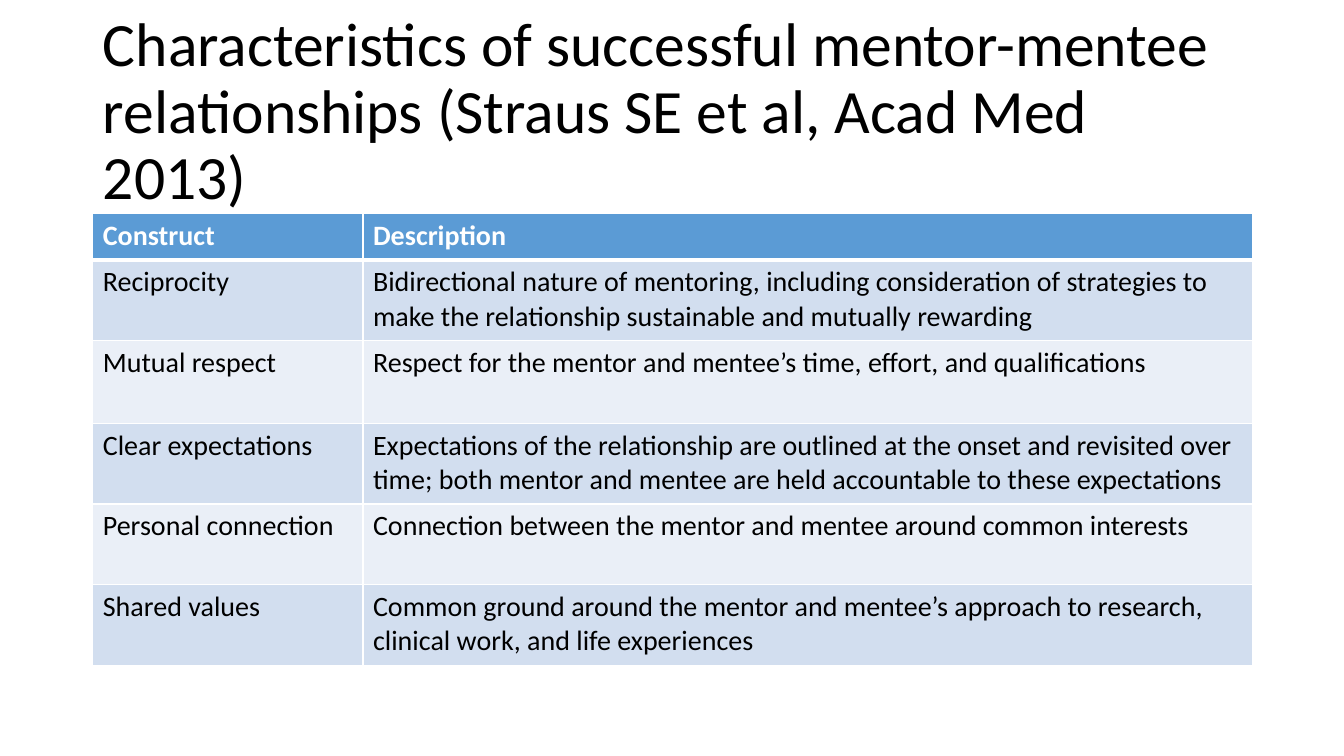
from lxml.etree import SubElement
from pptx import Presentation
from pptx.dml.color import RGBColor
from pptx.enum.text import MSO_ANCHOR, MSO_AUTO_SIZE, PP_ALIGN
from pptx.oxml.ns import qn
from pptx.util import Emu, Pt

PX = 9144
FONT = "Calibri"
COLUMN_WIDTHS = [268, 882]
ROW_HEIGHTS = [46, 80, 82, 80, 80, 80]
ROWS = [
    ("Construct", "Description"),
    ("Reciprocity", "Bidirectional nature of mentoring, including consideration of strategies to make the relationship sustainable and mutually rewarding"),
    ("Mutual respect", "Respect for the mentor and mentee’s time, effort, and qualifications"),
    ("Clear expectations", "Expectations of the relationship are outlined at the onset and revisited over time; both mentor and mentee are held accountable to these expectations"),
    ("Personal connection", "Connection between the mentor and mentee around common interests"),
    ("Shared values", "Common ground around the mentor and mentee’s approach to research, clinical work, and life experiences"),
]


def paint(color_format, color):
    color_format.rgb = RGBColor.from_string(color)


def write(frame, text, size, color, bold=False):
    frame.text = text
    para = frame.paragraphs[0]
    para.alignment = PP_ALIGN.LEFT
    font = para.runs[0].font
    font.name, font.size, font.bold = FONT, Pt(size), bold
    paint(font.color, color)
    return para


deck = Presentation()
deck.slide_width, deck.slide_height = Emu(1333 * PX), Emu(750 * PX)
page = deck.slides.add_slide(deck.slide_layouts[5])

title = page.shapes.title
title.left, title.top, title.width, title.height = [Emu(n * PX) for n in (92, 40, 1150, 145)]
frame = title.text_frame
frame.word_wrap = True
frame.auto_size = MSO_AUTO_SIZE.NONE
frame.vertical_anchor = MSO_ANCHOR.MIDDLE
para = write(frame, "Characteristics of successful mentor-mentee relationships (Straus SE et al, Acad Med 2013)", 44, "000000")
para.line_spacing = 0.9

box = page.shapes.add_table(
    len(ROWS), len(COLUMN_WIDTHS), Emu(92 * PX), Emu(212 * PX),
    Emu(sum(COLUMN_WIDTHS) * PX), Emu(sum(ROW_HEIGHTS) * PX),
)
table = box.table
for column, width in zip(table.columns, COLUMN_WIDTHS):
    column.width = Emu(width * PX)

for row_index, (texts, height) in enumerate(zip(ROWS, ROW_HEIGHTS)):
    table.rows[row_index].height = Emu(height * PX)
    header = row_index == 0
    fill = "5B9BD5" if header else ("EAEFF7", "D2DEEF")[row_index % 2]
    for column_index, text in enumerate(texts):
        cell = table.cell(row_index, column_index)
        write(cell.text_frame, text, 20, "FFFFFF" if header else "000000", header)
        properties = cell._tc.get_or_add_tcPr()
        for side in ("L", "R", "T", "B"):
            heavy = (row_index, side) in ((0, "B"), (1, "T"))
            line = SubElement(properties, qn(f"a:ln{side}"), w=str(Pt(3 if heavy else 1)))
            solid = SubElement(line, qn("a:solidFill"))
            SubElement(solid, qn("a:srgbClr"), val="FFFFFF")
        cell.fill.solid()
        paint(cell.fill.fore_color, fill)

deck.save("out.pptx")
